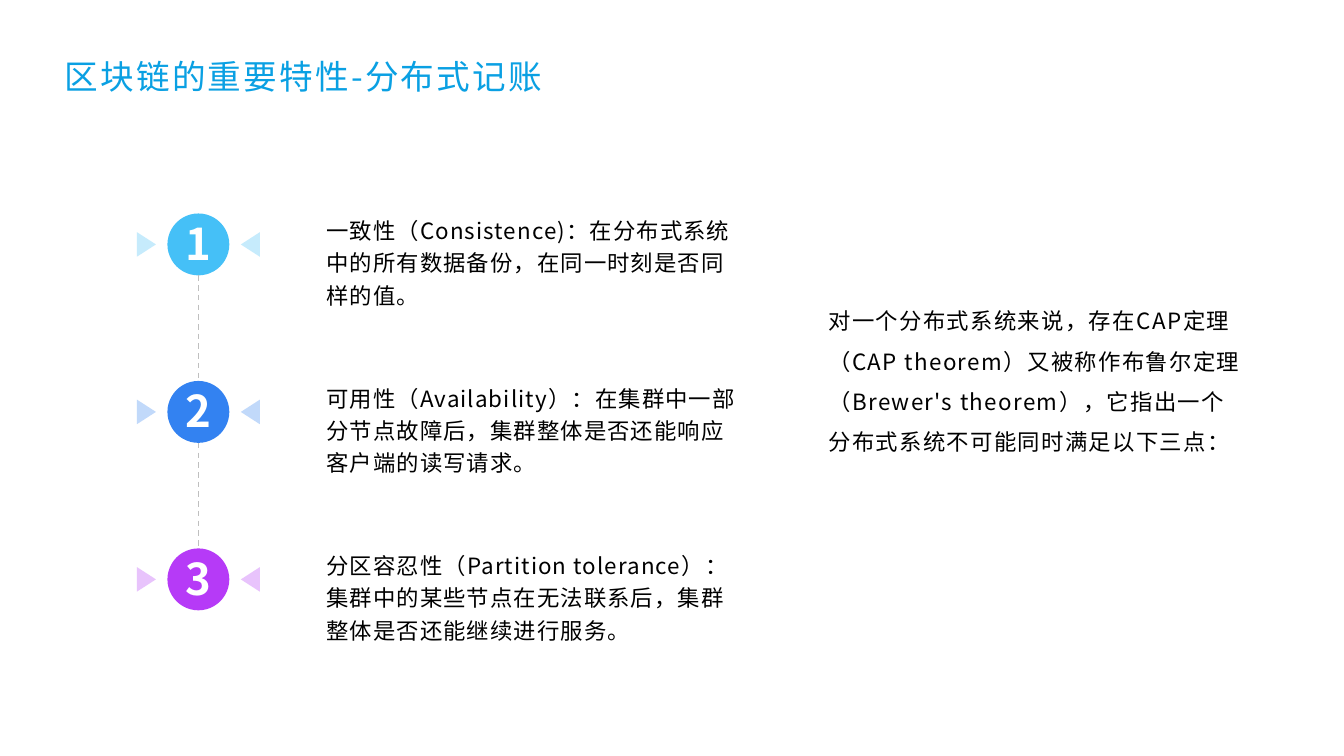
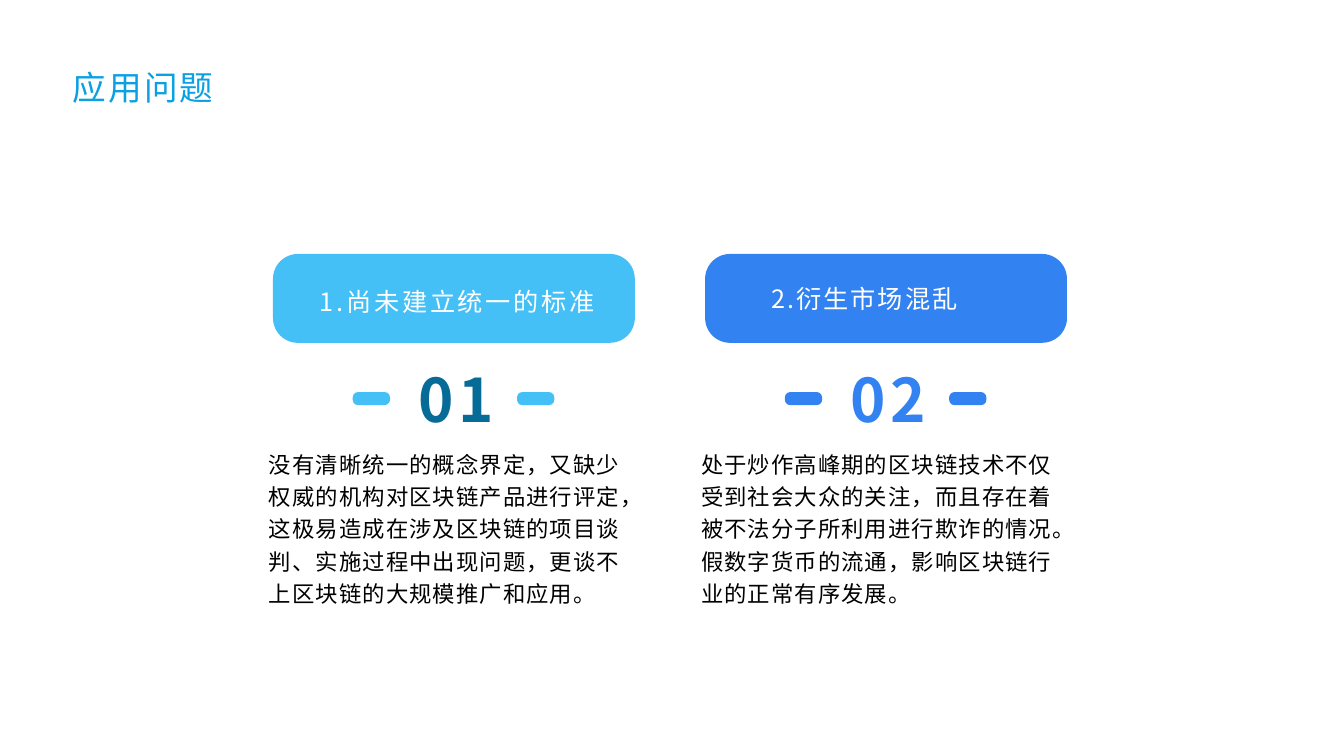
from lxml.etree import SubElement as Sub
from pptx import Presentation
from pptx.dml.color import RGBColor
from pptx.enum.dml import MSO_LINE as Dash
from pptx.enum.lang import MSO_LANGUAGE_ID as Lang
from pptx.enum.shapes import MSO_CONNECTOR as Link, MSO_SHAPE as Kind
from pptx.enum.text import MSO_ANCHOR as Anchor, PP_ALIGN as Align
from pptx.oxml.ns import qn
from pptx.util import Cm, Pt

SKY, BLUE, PURPLE = "45C0F7", "3382F1", "B63AF7"
WHITE, BLACK, GREY, TITLE, DEEP = "FFFFFF", "000000", "BFBFBF", "0AA0E3", "076B97"
WIDE, SLIM, NONE = (0.25, 0.13), (0.18, 0.09), (0, 0)


def rgb(code):
    return RGBColor.from_string(code)


class Deck:
    """Holds the style and the current slide, and draws each kind of element."""

    face = "Noto Sans CJK SC"

    def __init__(self):
        self.prs = Presentation()
        self.prs.slide_width, self.prs.slide_height = Cm(33.87), Cm(19.05)
        self.slide = None

    def page(self, title, box, anchor=Anchor.TOP):
        self.slide = self.prs.slides.add_slide(self.prs.slide_layouts[6])
        self.text(title, box, 24, TITLE, 1.6, inset=SLIM, anchor=anchor, after=0)

    def text(self, words, box, size, color, gap, lead=1, bold=False,
             align=Align.LEFT, inset=WIDE, anchor=Anchor.TOP, after=8):
        frame = self.slide.shapes.add_textbox(*map(Cm, box)).text_frame
        frame.word_wrap = True
        frame.vertical_anchor = anchor
        frame.margin_left = frame.margin_right = Cm(inset[0])
        frame.margin_top = frame.margin_bottom = Cm(inset[1])
        para = frame.paragraphs[0]
        para.alignment, para.line_spacing = align, lead
        para.space_after = Pt(after)
        run = para.add_run()
        run.text = words
        font = run.font
        font.name, font.size, font.bold = self.face, Pt(size), bold
        font.color.rgb = rgb(color)
        font.language_id = Lang.SIMPLIFIED_CHINESE
        props = run._r.get_or_add_rPr()
        props.set("spc", str(round(gap * 100)))
        Sub(props, qn("a:ea")).set("typeface", self.face)

    def body(self, words, box):
        self.text(words, box, 16, BLACK, 0.8, lead=1.2)

    def number(self, words, box, size, color, gap, **style):
        self.text(words, box, size, color, gap, bold=True, align=Align.CENTER, **style)

    def shape(self, kind, box, color, turn=0, alpha=None, curve=None):
        item = self.slide.shapes.add_shape(kind, *map(Cm, box))
        item.shadow.inherit = False
        item.rotation = turn
        item.fill.solid()
        item.fill.fore_color.rgb = rgb(color)
        item.line.fill.background()
        if curve is not None:
            item.adjustments[0] = curve
        if alpha is not None:
            tint = item._element.spPr.find(".//" + qn("a:srgbClr"))
            Sub(tint, qn("a:alpha")).set("val", str(alpha * 1000))

    def line(self, x, top, end):
        item = self.slide.shapes.add_connector(
            Link.STRAIGHT, Cm(x), Cm(top), Cm(x), Cm(end))
        item.line.color.rgb = rgb(GREY)
        item.line.width = Pt(1)
        item.line.dash_style = Dash.DASH
        Sub(item._element.spPr, qn("a:effectLst"))


def theorem(deck):
    deck.page("区块链的重要特性-分布式记账", (1.45, 1.32, 30.48, 1.7))
    points = [
        (SKY, "一致性（Consistence)：在分布式系统中的所有数据备份，在同一时刻是否同样的值。"),
        (BLUE, "可用性（Availability）：在集群中一部分节点故障后，集群整体是否还能响应客户端的读写请求。"),
        (PURPLE, "分区容忍性（Partition tolerance）：集群中的某些节点在无法联系后，集群整体是否还能继续进行服务。"),
    ]
    x, pitch, half = 5, 4.22, 0.78
    for i, (color, words) in enumerate(points):
        y = 6.16 + i * pitch
        if i:
            deck.line(x, y - pitch + half, y - half)
        for side, turn in ((-1, 90), (1, 270)):
            deck.shape(Kind.ISOSCELES_TRIANGLE,
                       (x + side * 1.31 - 0.31, y - 0.24, 0.62, 0.48),
                       color, turn, alpha=30)
        deck.shape(Kind.OVAL, (x - half, y - half, 2 * half, 2 * half), color)
        deck.number(str(i + 1), (x - 0.62, y - 0.83, 1.24, 1.63), 31.2, WHITE, 2.4)
        deck.body(words, (7.98, y - 0.95, 11.05, 2.72))
    deck.text("对一个分布式系统来说，存在CAP定理（CAP theorem）又被称作布鲁尔定理"
              "（Brewer's theorem），它指出一个分布式系统不可能同时满足以下三点：",
              (20.7, 7.32, 10.82, 7.29), 16, BLACK, 1, lead=1.5, inset=SLIM)


def issues(deck):
    deck.page("应用问题", (1.65, 1.14, 24.56, 2.11), Anchor.MIDDLE)
    cards = [
        (SKY, DEEP, "1.尚未建立统一的标准", 0.92, 7.67, 2, 1.2,
         "没有清晰统一的概念界定，又缺少权威的机构对区块链产品进行评定，"
         "这极易造成在涉及区块链的项目谈判、实施过程中出现问题，"
         "更谈不上区块链的大规模推广和应用。"),
        (BLUE, BLUE, "2.衍生市场混乱", 1.43, 6.38, 1.4, 1,
         "处于炒作高峰期的区块链技术不仅受到社会大众的关注，"
         "而且存在着被不法分子所利用进行欺诈的情况。"
         "假数字货币的流通，影响区块链行业的正常有序发展。"),
    ]
    for i, (color, ink, head, shift, width, gap, lead, words) in enumerate(cards):
        x = 6.88 + i * 10.89
        deck.shape(Kind.ROUNDED_RECTANGLE, (x, 6.4, 9.12, 2.24), color, curve=0.28)
        for step in (2.01, 6.15):
            deck.shape(Kind.ROUNDED_RECTANGLE, (x + step, 9.88, 0.94, 0.33),
                       color, curve=0.41)
        deck.number(f"{i + 1:02}", (x + 3.08, 9.12, 3.07, 1.85), 42.9, ink, 3.6,
                    inset=NONE, anchor=Anchor.MIDDLE)
        deck.text(head, (x + shift, 6.48, width, 2.08), 18, WHITE, gap,
                  lead=lead, anchor=Anchor.MIDDLE, after=0)
        deck.body(words, (x - 0.35, 11.1, 9.93, 4.52))


def main():
    deck = Deck()
    theorem(deck)
    issues(deck)
    deck.prs.save("out.pptx")


if __name__ == "__main__":
    main()
